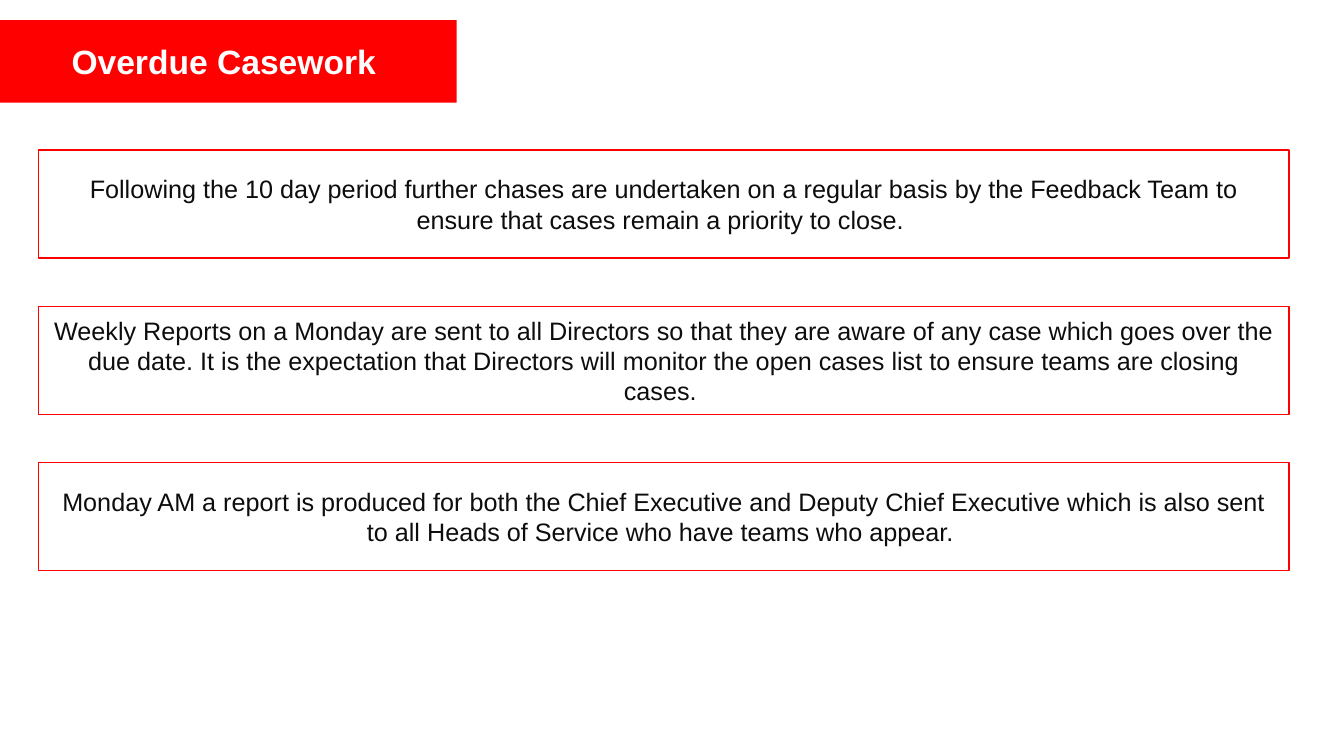
from pptx import Presentation
from pptx.dml.color import RGBColor
from pptx.enum.shapes import MSO_SHAPE
from pptx.enum.text import MSO_ANCHOR, MSO_AUTO_SIZE, PP_ALIGN
from pptx.util import Cm, Pt

RECTANGLE = MSO_SHAPE.RECTANGLE
MIDDLE = MSO_ANCHOR.MIDDLE
NO_AUTOFIT = MSO_AUTO_SIZE.NONE
CENTER = PP_ALIGN.CENTER
TITLE_ONLY = 5

FONT = "Arial"
RED, WHITE, INK = "FF0000", "FFFFFF", "0D0D0D"

BOX_LEFT, BOX_TOP, BOX_WIDTH, BOX_HEIGHT = 0.97, 3.78, 31.52, 2.72
BOX_PITCH = 3.94

STEPS = [
    "Following the 10 day period further chases are undertaken on a regular "
    "basis by the Feedback Team to ensure that cases remain a priority to close. ",
    "Weekly Reports on a Monday are sent to all Directors so that they are aware "
    "of any case which goes over the due date. It is the expectation that "
    "Directors will monitor the open cases list to ensure teams are closing cases. ",
    "Monday AM a report is produced for both the Chief Executive and Deputy Chief "
    "Executive which is also sent to all Heads of Service who have teams who appear. ",
]


def rgb(value):
    return RGBColor.from_string(value)


def fill_shape(sp, color):
    sp.fill.solid()
    sp.fill.fore_color.rgb = rgb(color)


def set_text(sp, text, size, color, bold=False):
    tf = sp.text_frame
    tf.text = text
    tf.word_wrap = True
    tf.auto_size = NO_AUTOFIT
    tf.vertical_anchor = MIDDLE
    p = tf.paragraphs[0]
    p.alignment = CENTER
    font = p.runs[0].font
    font.name = FONT
    font.size = Pt(size)
    font.bold = bold
    font.color.rgb = rgb(color)


def add_title(s, text):
    sp = s.shapes.title
    sp.left, sp.top, sp.width, sp.height = Cm(0), Cm(0.51), Cm(11.51), Cm(2.08)
    fill_shape(sp, RED)
    set_text(sp, text, 24, WHITE, bold=True)


def add_step_box(s, text, top):
    sp = s.shapes.add_shape(RECTANGLE, Cm(BOX_LEFT), Cm(top),
                            Cm(BOX_WIDTH), Cm(BOX_HEIGHT))
    sp.shadow.inherit = False
    fill_shape(sp, WHITE)
    sp.line.color.rgb = rgb(RED)
    sp.line.width = Pt(1)
    set_text(sp, text, 18, INK)


def main():
    prs = Presentation()
    prs.slide_width, prs.slide_height = Cm(33.87), Cm(19.05)
    s = prs.slides.add_slide(prs.slide_layouts[TITLE_ONLY])

    # Red title banner
    add_title(s, "Overdue Casework ")

    # Outlined boxes, evenly spaced down the slide
    for i, text in enumerate(STEPS):
        add_step_box(s, text, BOX_TOP + i * BOX_PITCH)

    prs.save("out.pptx")


if __name__ == "__main__":
    main()
